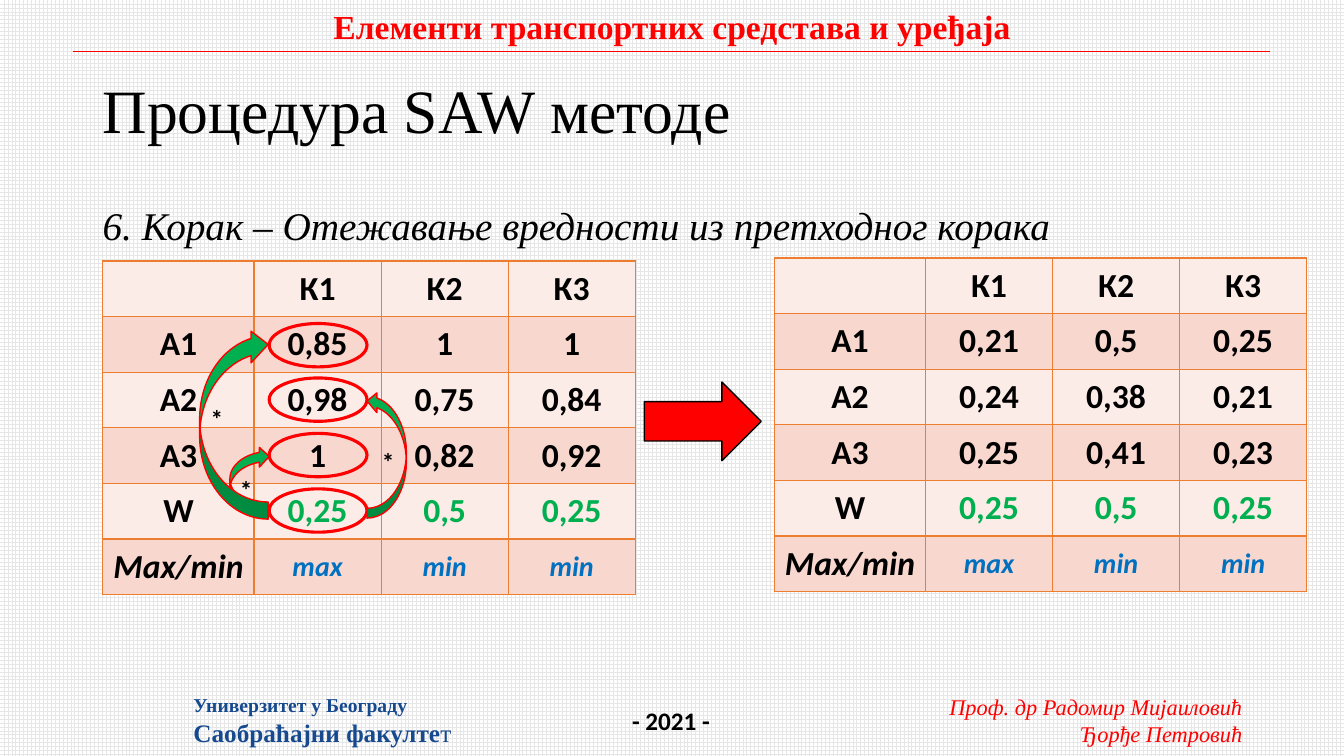
from lxml.etree import SubElement
from pptx import Presentation
from pptx.dml.color import RGBColor
from pptx.enum.dml import MSO_PATTERN
from pptx.enum.shapes import MSO_CONNECTOR, MSO_SHAPE
from pptx.enum.text import MSO_ANCHOR, MSO_AUTO_SIZE, PP_ALIGN
from pptx.oxml.ns import qn
from pptx.util import Inches, Pt

COLORS = {
    "red": "FF0000", "black": "000000", "green": "00B050", "blue": "0070C0",
    "navy": "16498E", "orange": "ED7D31", "light": "FCECE8", "dark": "F8D7CE",
    "grid": "E7E6E6", "white": "FFFFFF",
}
SERIF, SANS = "Times New Roman", "Calibri"
HEADER = ["", "К1", "К2", "К3"]
FOOTER = [["W", "0,25", "0,5", "0,25"], ["Max/min", "max", "min", "min"]]
NORMALIZED = [["А1", "0,85", "1", "1"], ["А2", "0,98", "0,75", "0,84"],
              ["А3", "1", "0,82", "0,92"]]
WEIGHTED = [["А1", "0,21", "0,5", "0,25"], ["А2", "0,24", "0,38", "0,21"],
            ["А3", "0,25", "0,41", "0,23"]]


def rgb(name):
    """Return the named colour."""
    return RGBColor.from_string(COLORS[name])


def set_font(p, size, name, color, bold=False, italic=False):
    """Set the font of a paragraph."""
    font = p.font
    font.size, font.name = Pt(size), name
    font.bold, font.italic = bold, italic
    font.color.rgb = rgb(color)


def add_text(s, box, lines, sizes, font, color, bold=False, italic=False,
             align=PP_ALIGN.LEFT, wrap=False, anchor=MSO_ANCHOR.TOP, spacing=None):
    """Add a text box with one paragraph per line and return its frame."""
    tf = s.shapes.add_textbox(*map(Inches, box)).text_frame
    tf.word_wrap, tf.vertical_anchor = wrap, anchor
    tf.auto_size = MSO_AUTO_SIZE.NONE if wrap else MSO_AUTO_SIZE.SHAPE_TO_FIT_TEXT
    for i, (line, size) in enumerate(zip(lines, sizes)):
        p = tf.add_paragraph() if i else tf.paragraphs[0]
        p.add_run().text = line
        p.alignment, p.line_spacing = align, spacing
        set_font(p, size, font, color, bold, italic)
    return tf


def add_line(s, x1, x2, y):
    """Add the thin rule under the course name."""
    line = s.shapes.add_connector(
        MSO_CONNECTOR.STRAIGHT, Inches(x1), Inches(y), Inches(x2), Inches(y))
    line.line.color.rgb = rgb("red")
    line.line.width = Pt(0.5)
    SubElement(line._element.spPr, qn("a:effectLst"))


def add_shape(s, kind, box, fill, line, width):
    """Add a preset shape, unfilled when fill is None."""
    sp = s.shapes.add_shape(kind, *map(Inches, box))
    sp.shadow.inherit = False
    if fill:
        sp.fill.solid()
        sp.fill.fore_color.rgb = rgb(fill)
    else:
        sp.fill.background()
    sp.line.color.rgb = rgb(line)
    sp.line.width = Pt(width)
    return sp


def add_curved_arrow(s, box, flip=False):
    """Add a green curved arrow that points up from the weight."""
    sp = add_shape(s, MSO_SHAPE.CURVED_LEFT_ARROW, box, "green", "red", 1)
    sp.rotation = 180
    if flip:
        sp._element.spPr.find(qn("a:xfrm")).set("flipH", "1")
    return sp


def set_borders(cell):
    """Draw an orange border on each side of a cell."""
    tc_pr = cell._tc.get_or_add_tcPr()
    for side in ("lnL", "lnR", "lnT", "lnB"):
        ln = SubElement(tc_pr, qn(f"a:{side}"), w=str(Pt(1)))
        fill = SubElement(ln, qn("a:solidFill"))
        SubElement(fill, qn("a:srgbClr"), val=COLORS["orange"])


def cell_style(row, col):
    """Return size, colour and italic of a table cell."""
    if row == 5:
        return (20, "blue", True) if col else (24, "black", True)
    return 24, "green" if row == 4 and col else "black", False


def add_matrix(s, left, top, values):
    """Add a decision matrix of alternatives and criteria."""
    rows = [HEADER, *values, *FOOTER]
    table = s.shapes.add_table(len(rows), len(HEADER), Inches(left), Inches(top),
                               Inches(5.28), Inches(3.31)).table
    for i, col in enumerate(table.columns):
        col.width = Inches(1.26 if i else 1.5)
    for r, row in enumerate(rows):
        table.rows[r].height = Inches(3.31 / len(rows))
        for c, value in enumerate(row):
            cell = table.cell(r, c)
            set_borders(cell)
            cell.fill.solid()
            cell.fill.fore_color.rgb = rgb("dark" if r % 2 else "light")
            cell.vertical_anchor = MSO_ANCHOR.MIDDLE
            if value:
                p = cell.text_frame.paragraphs[0]
                p.add_run().text = value
                p.alignment = PP_ALIGN.CENTER
                size, color, italic = cell_style(r, c)
                set_font(p, size, SANS, color, True, italic)


def add_frame(s):
    """Add the grid background, course name and footer."""
    fill = s.background.fill
    fill.patterned()
    fill.pattern = MSO_PATTERN.LARGE_GRID
    fill.fore_color.rgb, fill.back_color.rgb = rgb("grid"), rgb("white")
    add_text(s, (9.22, 6.83, 3.2, 0.64), ["Проф. др Радомир Мијаиловић", "Ђорђе Петровић"],
             [16, 16], SERIF, "red", italic=True, align=PP_ALIGN.RIGHT)
    add_line(s, 0.72, 12.6, 0.51)
    add_text(s, (3.17, 0.01, 6.99, 0.5), ["Елементи транспортних средстава и уређаја"],
             [24], SERIF, "red", bold=True, align=PP_ALIGN.CENTER)
    add_text(s, (6.17, 6.95, 0.98, 0.4), ["- 2021 -"], [18], SANS, "black", bold=True)
    tf = add_text(s, (1.82, 6.83, 2.79, 0.64), ["Универзитет у Београду", "Саобраћајни факулте"],
                  [14, 18], SERIF, "navy", bold=True)
    r = tf.paragraphs[1].add_run()
    r.text = "т"
    r.font.bold = False


def add_weighting(s):
    """Mark the first criterion and the products with its weight."""
    add_shape(s, MSO_SHAPE.RIGHT_ARROW, (6.39, 3.79, 1.16, 0.78), "red", "black", 1)
    for top in (4.85, 3.21, 3.75, 4.3):
        add_shape(s, MSO_SHAPE.OVAL, (2.67, top, 0.97, 0.43), None, "red", 2.25)
    add_curved_arrow(s, (2.28, 4.43, 0.39, 0.69))
    add_curved_arrow(s, (3.64, 3.88, 0.39, 1.26), flip=True)
    add_curved_arrow(s, (1.98, 3.26, 0.68, 1.89)).adjustments[1] = 0.461
    for left, top in ((2.28, 4.66), (3.69, 4.38), (1.99, 3.95)):
        add_text(s, (left, top, 0.33, 0.4), ["*"], [18], SANS, "black", bold=True)


def main():
    """Build the slide and save it."""
    prs = Presentation()
    prs.slide_width, prs.slide_height = Inches(13.33), Inches(7.5)
    s = prs.slides.add_slide(prs.slide_layouts[6])
    add_frame(s)
    add_text(s, (0.92, 0.4, 11.5, 1.45), ["Процедура SAW методе"], [44], SERIF, "black",
             wrap=True, anchor=MSO_ANCHOR.MIDDLE, spacing=0.9)
    add_text(s, (0.92, 2, 11.5, 4.76), ["6. Корак – Отежавање вредности из претходног корака"],
             [28], SERIF, "black", italic=True, wrap=True, spacing=0.9)
    add_matrix(s, 1.02, 2.59, NORMALIZED)
    add_weighting(s)
    add_matrix(s, 7.68, 2.56, WEIGHTED)
    prs.save("out.pptx")


if __name__ == "__main__":
    main()
